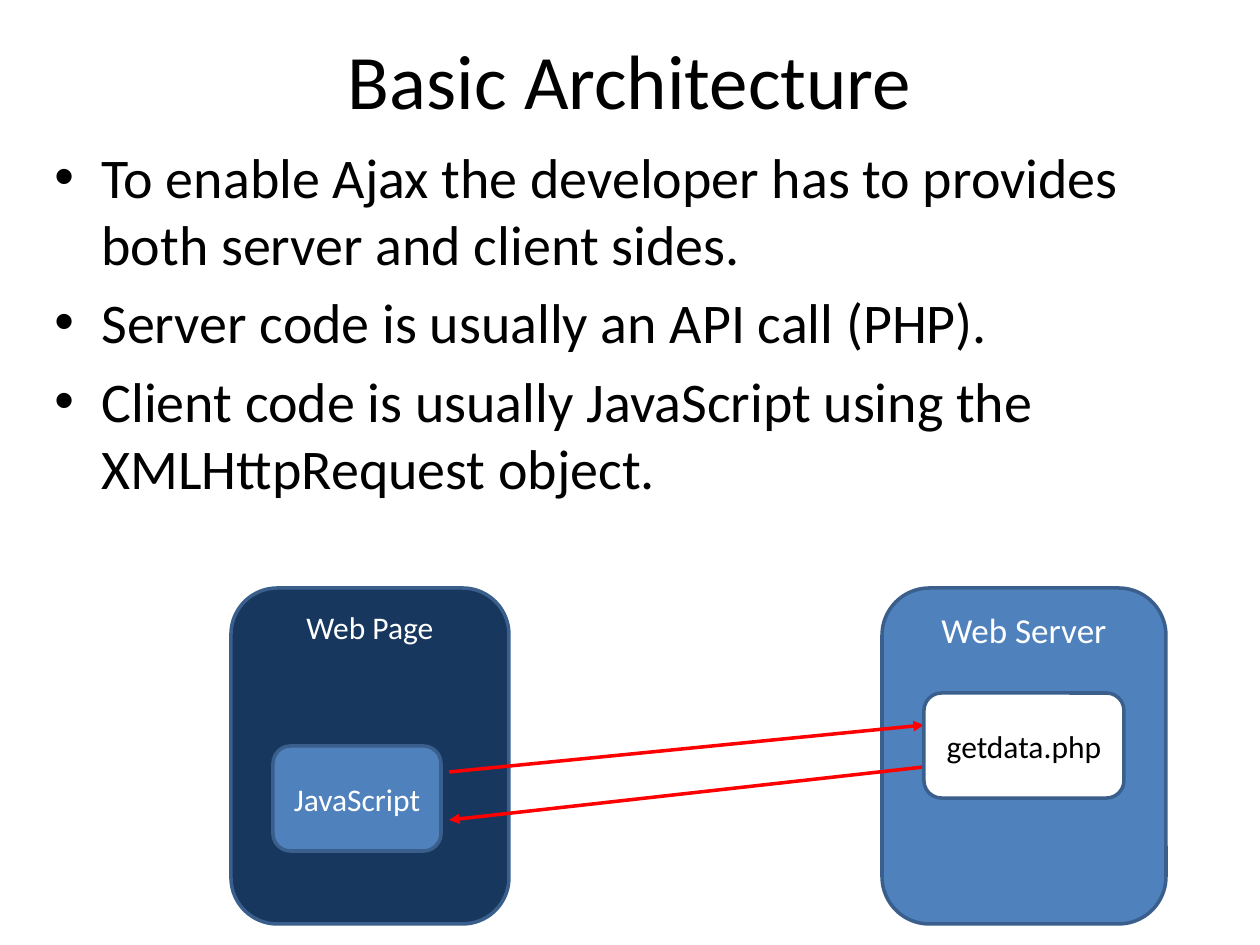
from lxml import etree
from pptx import Presentation, util as u
from pptx.dml.color import RGBColor
from pptx.enum import shapes, text
from pptx.oxml import ns

SCALE = 914400 / 126  # EMU per px
FONT = "Calibri"
COLORS = {
    "black": "000000",
    "white": "FFFFFF",
    "blue": "4F81BD",
    "navy": "17375E",
    "outline": "3A5F8C",
    "request": "FF0000",
}
POINTS = [
    "To enable Ajax the developer has to provides both server and client sides.",
    "Server code is usually an API call (PHP).",
    "Client code is usually JavaScript using the XMLHttpRequest object.",
]


def px(length):
    return u.Emu(round(length * SCALE))


def color(name):
    return RGBColor.from_string(COLORS[name])


def add_run(paragraph, wording, size, ink):
    run = paragraph.add_run()
    run.text = wording
    run.font.name = FONT
    run.font.size = u.Pt(size)
    run.font.color.rgb = color(ink)


def set_title(slide, wording):
    title = slide.shapes.title
    title.left, title.top, title.width, title.height = map(px, (63, 0, 1134, 158))
    frame = title.text_frame
    frame.vertical_anchor = text.MSO_ANCHOR.MIDDLE
    heading = frame.paragraphs[0]
    heading.alignment = text.PP_ALIGN.CENTER
    add_run(heading, wording, 44, "black")


def add_bullets(slide, points):
    frame = slide.shapes.add_textbox(*map(px, (42, 136, 1155, 462))).text_frame
    frame.word_wrap = True
    for index, point in enumerate(points):
        paragraph = frame.add_paragraph() if index else frame.paragraphs[0]
        paragraph.space_before = u.Pt(6.4)
        add_run(paragraph, point, 32, "black")
        properties = paragraph._p.get_or_add_pPr()
        properties.set("marL", str(px(47)))
        properties.set("indent", str(-px(47)))
        etree.SubElement(properties, ns.qn("a:buFont"), typeface="Arial")
        etree.SubElement(properties, ns.qn("a:buChar"), char="•")


def add_box(slide, place, label, fill, size=18, ink="white",
            anchor=text.MSO_ANCHOR.MIDDLE):
    box = slide.shapes.add_shape(
        shapes.MSO_SHAPE.ROUNDED_RECTANGLE, *map(px, place))
    box.shadow.inherit = False
    box.fill.solid()
    box.fill.fore_color.rgb = color(fill)
    box.line.color.rgb = color("outline")
    box.line.width = u.Pt(2)
    frame = box.text_frame
    frame.word_wrap = True
    frame.vertical_anchor = anchor
    frame.paragraphs[0].alignment = text.PP_ALIGN.CENTER
    add_run(frame.paragraphs[0], label, size, ink)


def add_arrow(slide, start, end):
    arrow = slide.shapes.add_connector(
        shapes.MSO_CONNECTOR.STRAIGHT, *map(px, start + end))
    arrow.line.color.rgb = color("request")
    arrow.line.width = u.Pt(2)
    etree.SubElement(arrow.line._get_or_add_ln(), ns.qn("a:tailEnd"), type="triangle")
    etree.SubElement(arrow._element.spPr, ns.qn("a:effectLst"))


def main():
    deck = Presentation()
    deck.slide_width, deck.slide_height = px(1260), px(945)
    slide = deck.slides.add_slide(deck.slide_layouts[5])

    set_title(slide, "Basic Architecture")
    add_bullets(slide, POINTS)

    top = text.MSO_ANCHOR.TOP
    add_box(slide, (882, 588, 284, 336), "Web Server", "blue", size=20, anchor=top)
    add_box(slide, (231, 588, 278, 336), "Web Page", "navy", anchor=top)
    add_arrow(slide, (449, 772), (924, 725))
    add_arrow(slide, (924, 767), (449, 820))
    add_box(slide, (273, 746, 168, 105), "JavaScript", "blue")
    add_box(slide, (924, 693, 200, 105), "getdata.php", "white", ink="black")

    deck.save("out.pptx")


if __name__ == "__main__":
    main()
